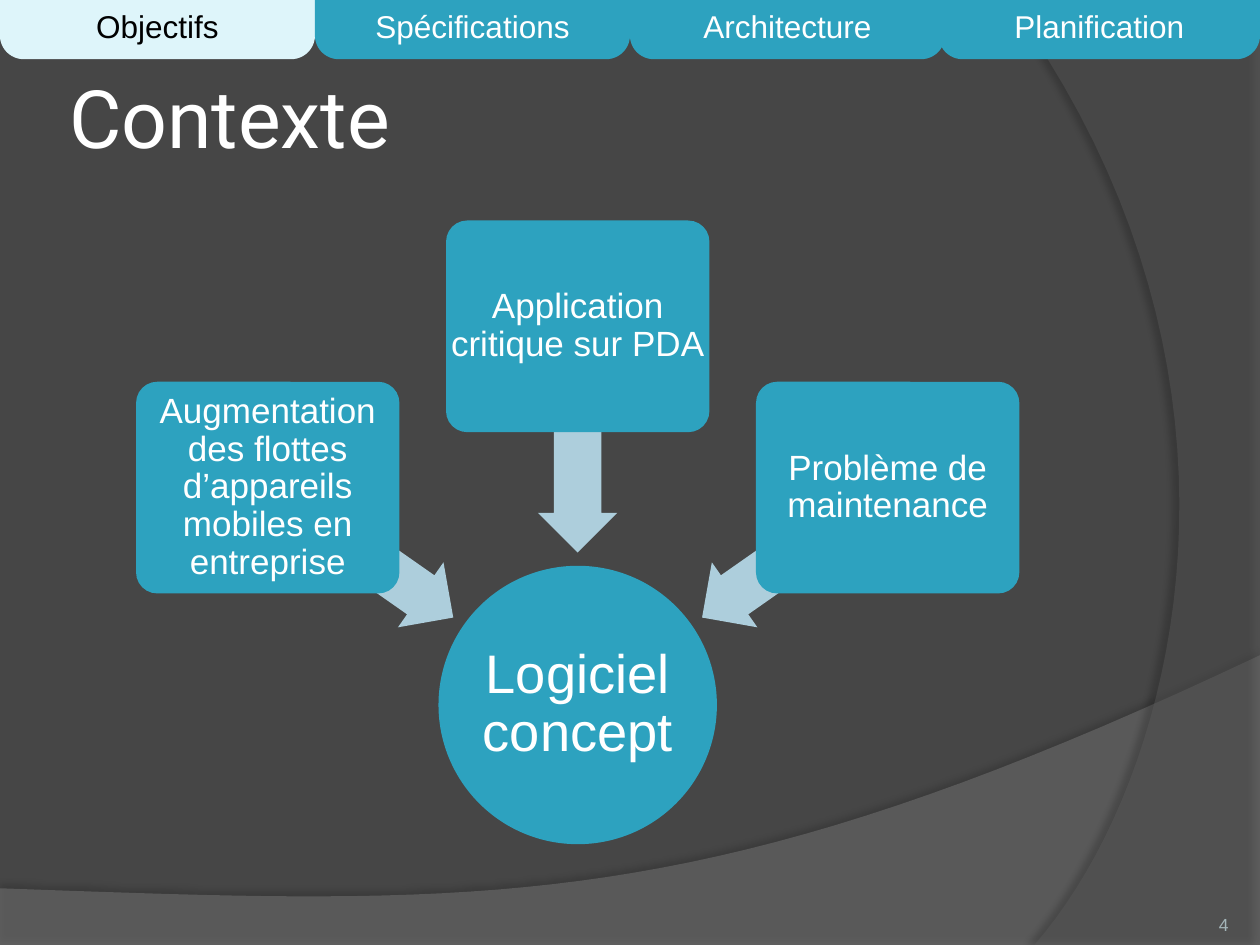
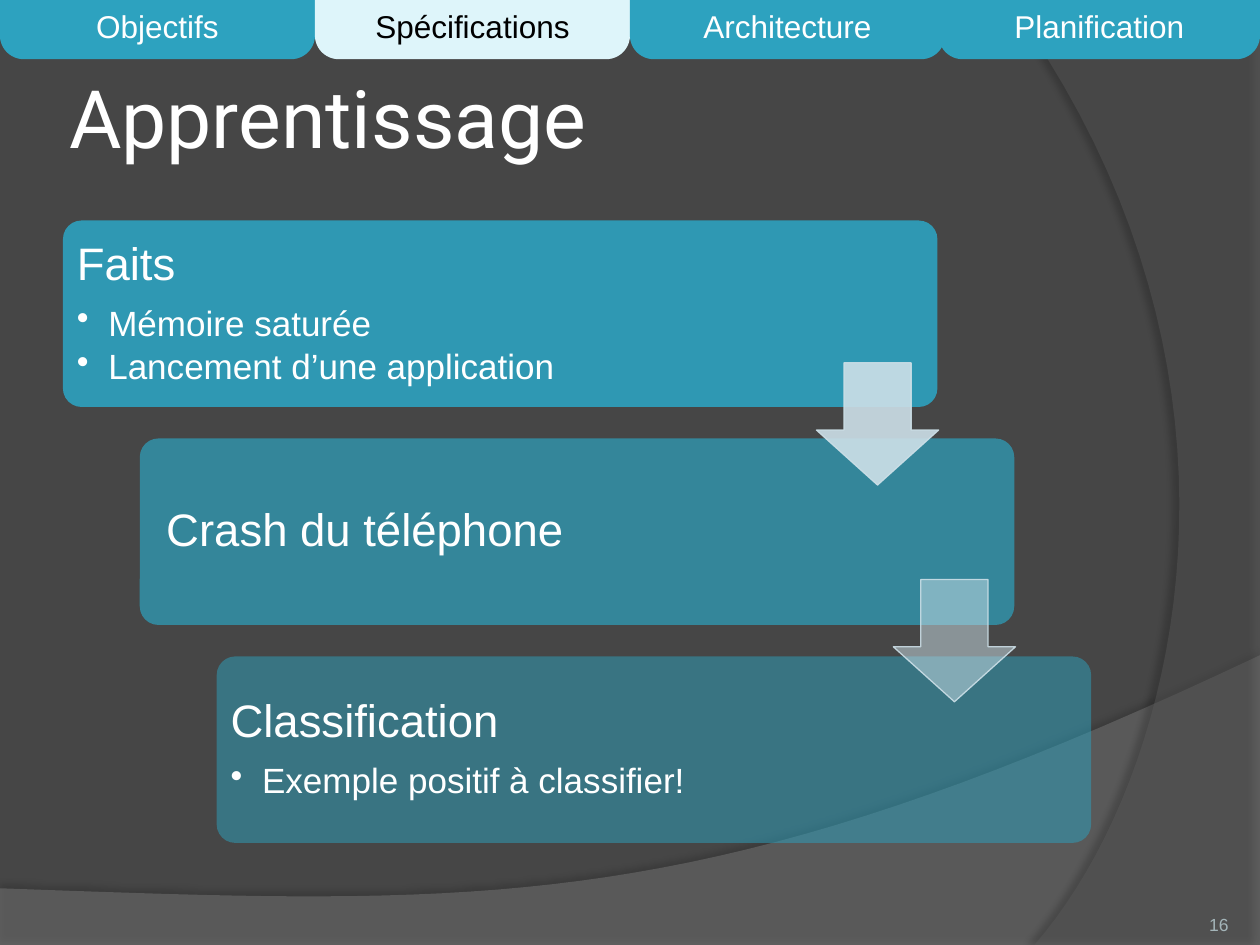
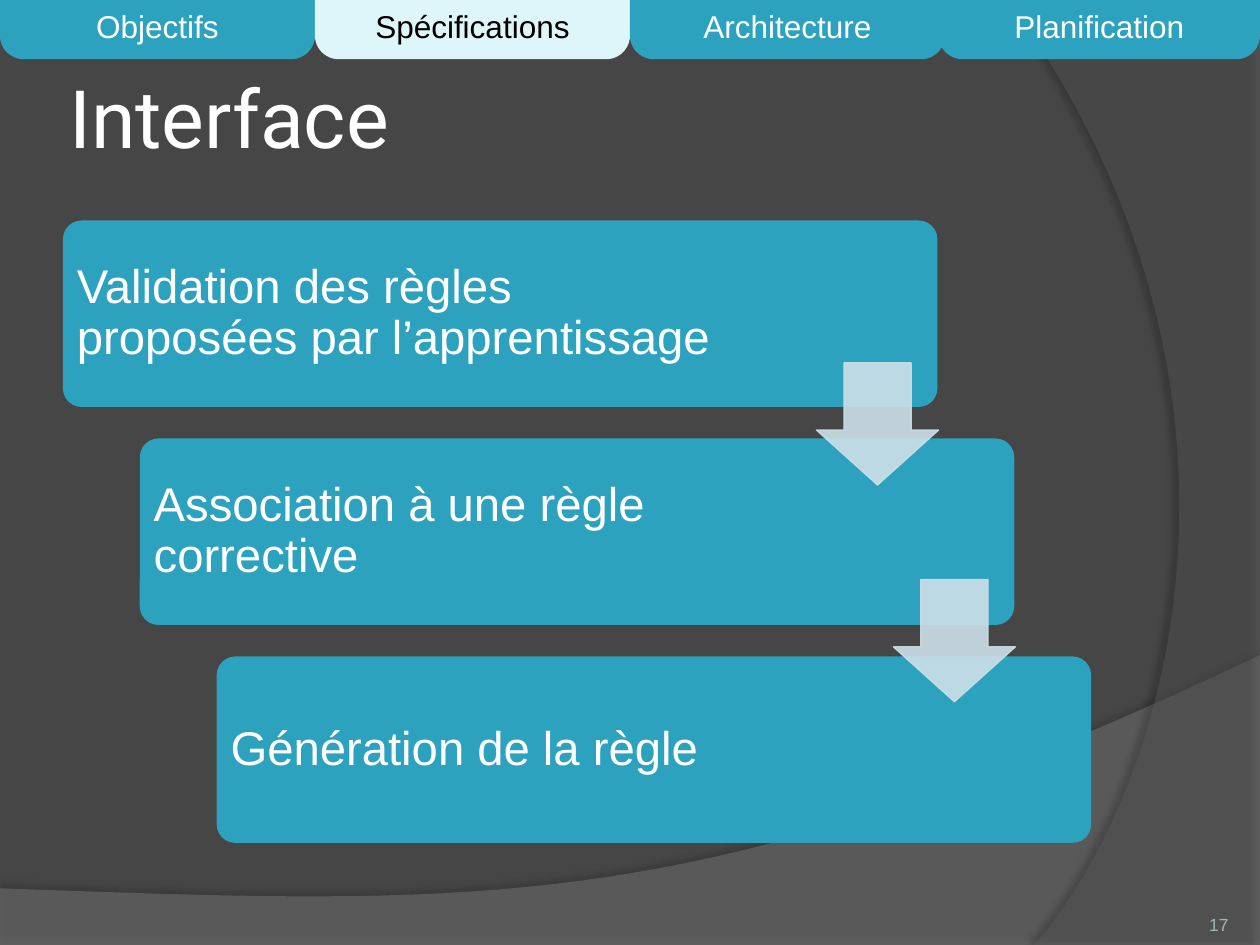
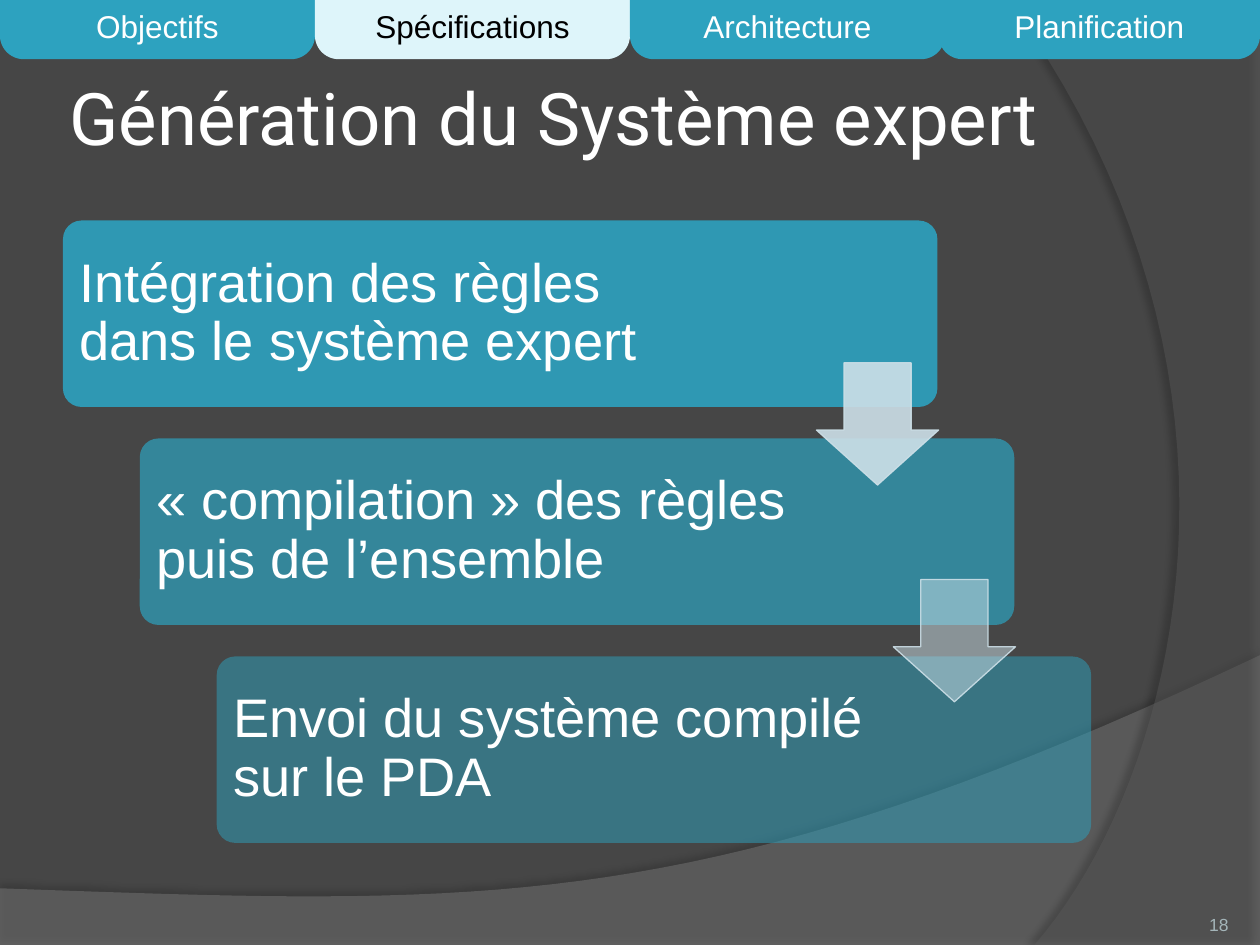
from dataclasses import dataclass

from lxml import etree
from pptx import Presentation
from pptx import util as u
from pptx.dml.color import RGBColor
from pptx.enum import shapes, text
from pptx.oxml.ns import qn
from pptx.shapes.autoshape import Shape
from pptx.slide import Slide

Box = tuple[float, float, float, float]
Point = tuple[float, float]

BACKDROP, TEAL, PALE, WHITE, BLACK = "464646", "2DA2BF", "DEF5FA", "FFFFFF", "000000"
CONVERGING, DESCENDING, NUMBERING = "ADCEDC", "CDE0E8", "A4B5B9"
BODY_FONT, TITLE_FONT = "Arial", "Roboto"
FORM = shapes.MSO_SHAPE
LEFT, CENTER, RIGHT = text.PP_ALIGN.LEFT, text.PP_ALIGN.CENTER, text.PP_ALIGN.RIGHT
MIDDLE, BOTTOM = text.MSO_ANCHOR.MIDDLE, text.MSO_ANCHOR.BOTTOM
FADING, SOLID = (90, 70, 50), (100, 100, 100)


@dataclass
class Tab:
    """A section shown in the navigation band."""

    label: str
    left: float
    width: float = 2.5


@dataclass
class Swoosh:
    """A translucent curved area of the backdrop with its shadow."""

    edges: list[Point]
    curve: tuple[Point, Point, Point]
    color: str
    opacity: int
    shade: int
    distance: float
    direction: int


@dataclass
class Cause:
    """A reason that leads to the central concept."""

    label: str
    top: float
    arrow_top: float
    rotation: int


@dataclass
class Step:
    """One stage of a descending process."""

    heading: str
    details: tuple[str, ...] = ()


@dataclass
class Process:
    """A slide holding three descending steps."""

    title: str
    number: int
    steps: tuple[Step, Step, Step]
    size: float
    inset: float
    opacities: tuple[int, int, int]
    arrow_opacities: tuple[int, int]
    title_size: float = 46


TABS = [
    Tab("Objectifs", 0),
    Tab("Spécifications", 2.5),
    Tab("Architecture", 5),
    Tab("Planification", 7.45, 2.55),
]

SWOOSHES = [
    Swoosh([(0, 7.05), (0, 7.51), (10, 7.51), (10, 5.2)],
           ((5.59, 7.29), (3.91, 7.19), (0, 7.05)), "7F7F7F", 45, 35, 3.5, 270),
    Swoosh([(10, 0.02), (10, 7.5), (8.21, 7.5)],
           ((9.35, 6.19), (10.18, 3), (8, 0)), "5E5E5E", 40, 45, 4, 180),
]

CAUSES = [
    Cause("Augmentation des flottes d’appareils mobiles en entreprise", 3.03, 4.07, 215),
    Cause("Application critique sur PDA", 1.75, 3.17, 270),
    Cause("Problème de maintenance", 3.03, 4.07, 325),
]

PROCESSES = [
    Process("Apprentissage", 16, (
        Step("Faits", ("Mémoire saturée", "Lancement d’une application")),
        Step(" Crash du téléphone"),
        Step("Classification", ("Exemple positif à classifier!",)),
    ), 26, 0.11, FADING, (90, 50)),
    Process("Interface", 17, (
        Step("Validation des règles proposées par l’apprentissage"),
        Step("Association à une règle corrective"),
        Step("Génération de la règle"),
    ), 27, 0.11, SOLID, (90, 90)),
    Process("Génération du Système expert", 18, (
        Step("Intégration des règles\vdans le système expert"),
        Step("« compilation » des règles puis de l’ensemble"),
        Step("Envoi du système compilé sur le PDA"),
    ), 31, 0.13, FADING, (90, 50), 41.4),
]


def rgb(value: str) -> RGBColor:
    """Turn a hex string into a colour."""
    return RGBColor.from_string(value)


def inches(box: Box) -> list[u.Length]:
    """Convert left, top, width and height to lengths."""
    return [u.Inches(side) for side in box]


def set_opacity(color: etree.ElementBase, percent: float) -> None:
    """Add an opacity to a colour element."""
    etree.SubElement(color, qn("a:alpha"), val=str(int(percent * 1000)))


def paint(shape: Shape, color: str, opacity: int = 100) -> None:
    """Give a shape a flat fill without outline or shadow."""
    shape.shadow.inherit = False
    shape.fill.solid()
    shape.fill.fore_color.rgb = rgb(color)
    shape.line.fill.background()
    if opacity < 100:
        set_opacity(shape.element.spPr.xpath("a:solidFill/a:srgbClr")[0], opacity)


def add_form(slide: Slide, form: shapes.MSO_SHAPE, box: Box, color: str,
             adjustments: tuple[float, ...] = (), opacity: int = 100,
             rotation: float = 0) -> Shape:
    """Draw a filled preset shape."""
    shape = slide.shapes.add_shape(form, *inches(box))
    for index, value in enumerate(adjustments):
        shape.adjustments[index] = value
    shape.rotation = rotation
    paint(shape, color, opacity)
    return shape


def write(shape: Shape, lines: list[str], size: float, color: str = WHITE,
          font: str = BODY_FONT, align: text.PP_ALIGN = LEFT,
          anchor: text.MSO_ANCHOR = MIDDLE, margins: tuple[float, float] = (0.1, 0.05),
          tight: bool = False, detail_size: float = 20) -> None:
    """Write a heading, then its bulleted details, into a shape."""
    frame = shape.text_frame
    frame.word_wrap = True
    frame.vertical_anchor = anchor
    frame.margin_left = frame.margin_right = u.Inches(margins[0])
    frame.margin_top = frame.margin_bottom = u.Inches(margins[1])
    for index, line in enumerate(lines):
        paragraph = frame.add_paragraph() if index else frame.paragraphs[0]
        paragraph.text = line
        paragraph.alignment = align
        points = detail_size if index else size
        if tight:
            paragraph.line_spacing = 0.9
            paragraph.space_after = u.Pt(round(points * (0.15 if index else 0.35), 1))
        if index:
            paragraph.level = 1
            properties = paragraph._p.get_or_add_pPr()
            properties.set("marL", str(u.Inches(0.25)))
            properties.set("indent", str(-u.Inches(0.25)))
            etree.SubElement(properties, qn("a:buChar"), char="•")
        paragraph.font.name = font
        paragraph.font.size = u.Pt(points)
        paragraph.font.color.rgb = rgb(color)


def add_label(slide: Slide, box: Box, lines: list[str], size: float, **style) -> None:
    """Place text in a box of its own."""
    write(slide.shapes.add_textbox(*inches(box)), lines, size, **style)


def bezier(start: Point, first: Point, second: Point, end: Point, count: int = 40) -> list[Point]:
    """Sample a cubic curve after its start point."""
    points = []
    for step in range(1, count + 1):
        t = step / count
        weights = ((1 - t) ** 3, 3 * t * (1 - t) ** 2, 3 * t * t * (1 - t), t ** 3)
        controls = (start, first, second, end)
        points.append((sum(w * p[0] for w, p in zip(weights, controls)),
                       sum(w * p[1] for w, p in zip(weights, controls))))
    return points


def add_swoosh(slide: Slide, swoosh: Swoosh) -> None:
    """Draw one curved area of the backdrop."""
    outline = swoosh.edges + bezier(swoosh.edges[-1], *swoosh.curve)
    corners = [(u.Inches(x), u.Inches(y)) for x, y in outline]
    builder = slide.shapes.build_freeform(*corners[0])
    builder.add_line_segments(corners[1:], close=True)
    area = builder.convert_to_shape()
    paint(area, swoosh.color, swoosh.opacity)
    effects = area.element.spPr.find(qn("a:effectLst"))
    shadow = etree.SubElement(effects, qn("a:outerShdw"), blurRad=str(u.Pt(4)),
                              dist=str(u.Pt(swoosh.distance)),
                              dir=str(swoosh.direction * 60000), rotWithShape="0")
    set_opacity(etree.SubElement(shadow, qn("a:srgbClr"), val=BLACK), swoosh.shade)


def start_slide(deck: Presentation, title: str, title_size: float = 46) -> Slide:
    """Add a slide with the backdrop and its title."""
    slide = deck.slides.add_slide(deck.slide_layouts[6])
    for swoosh in SWOOSHES:
        add_swoosh(slide, swoosh)
    add_label(slide, (0.5, 0.3, 8.17, 1.25), [title], title_size,
              font=TITLE_FONT, margins=(0.05, 0.05))
    return slide


def finish_slide(slide: Slide, number: int, section: str) -> None:
    """Add the page number and the navigation band."""
    add_label(slide, (8.92, 7.02, 0.83, 0.4), [str(number)], 10, color=NUMBERING,
              align=RIGHT, anchor=BOTTOM, margins=(0, 0))
    for tab in TABS:
        current = tab.label == section
        shape = add_form(slide, FORM.ROUND_2_SAME_RECTANGLE, (tab.left, 0, tab.width, 0.47),
                         PALE if current else TEAL, (0, 0.4))
        write(shape, [tab.label], 18, color=BLACK if current else WHITE, align=CENTER)


def add_context(deck: Presentation) -> None:
    """Build the slide where causes converge on the concept."""
    slide = start_slide(deck, "Contexte")
    concept = (3.48, 4.49, 2.21, 2.21)
    add_form(slide, FORM.OVAL, concept, TEAL)
    add_label(slide, concept, ["Logiciel concept"], 31, align=CENTER,
              margins=(0.02, 0.02), tight=True)
    for index, cause in enumerate(CAUSES):
        add_form(slide, FORM.LEFT_ARROW, (1.96 + 1.725 * index, cause.arrow_top, 1.8, 0.63),
                 CONVERGING, (0.6, 0.5), rotation=cause.rotation)
        card = (1.08 + 2.46 * index, cause.top, 2.09, 1.68)
        add_form(slide, FORM.ROUNDED_RECTANGLE, card, TEAL, (0.1,))
        add_label(slide, card, [cause.label], 20, align=CENTER,
                  margins=(0.03, 0.04), tight=True)
    finish_slide(slide, 4, "Objectifs")


def add_process(deck: Presentation, process: Process) -> None:
    """Build a slide of three descending steps joined by arrows."""
    slide = start_slide(deck, process.title, process.title_size)
    for index, (step, opacity) in enumerate(zip(process.steps, process.opacities)):
        left, top = 0.5 + 0.61 * index, 1.75 + 1.73 * index
        add_form(slide, FORM.ROUNDED_RECTANGLE, (left, top, 6.94, 1.48), TEAL, (0.1,), opacity)
        add_label(slide, (left, top, 5.36 if index else 5.43, 1.48),
                  [step.heading, *step.details], process.size,
                  margins=(process.inset, process.inset), tight=True)
    for index, opacity in enumerate(process.arrow_opacities):
        arrow = add_form(slide, FORM.DOWN_ARROW,
                         (6.48 + 0.61 * index, 2.88 + 1.72 * index, 0.97, 0.97),
                         DESCENDING, (0.55, 0.45), opacity)
        arrow.line.color.rgb = rgb(DESCENDING)
        arrow.line.width = u.Pt(0.75)
        set_opacity(arrow.element.spPr.xpath("a:ln/a:solidFill/a:srgbClr")[0], 90)
    finish_slide(slide, process.number, "Spécifications")


def main() -> None:
    """Build and save the presentation."""
    deck = Presentation()
    deck.slide_width, deck.slide_height = u.Inches(10), u.Inches(7.5)
    backdrop = deck.slide_master.background.fill
    backdrop.solid()
    backdrop.fore_color.rgb = rgb(BACKDROP)
    add_context(deck)
    for process in PROCESSES:
        add_process(deck, process)
    deck.save("out.pptx")


if __name__ == "__main__":
    main()
